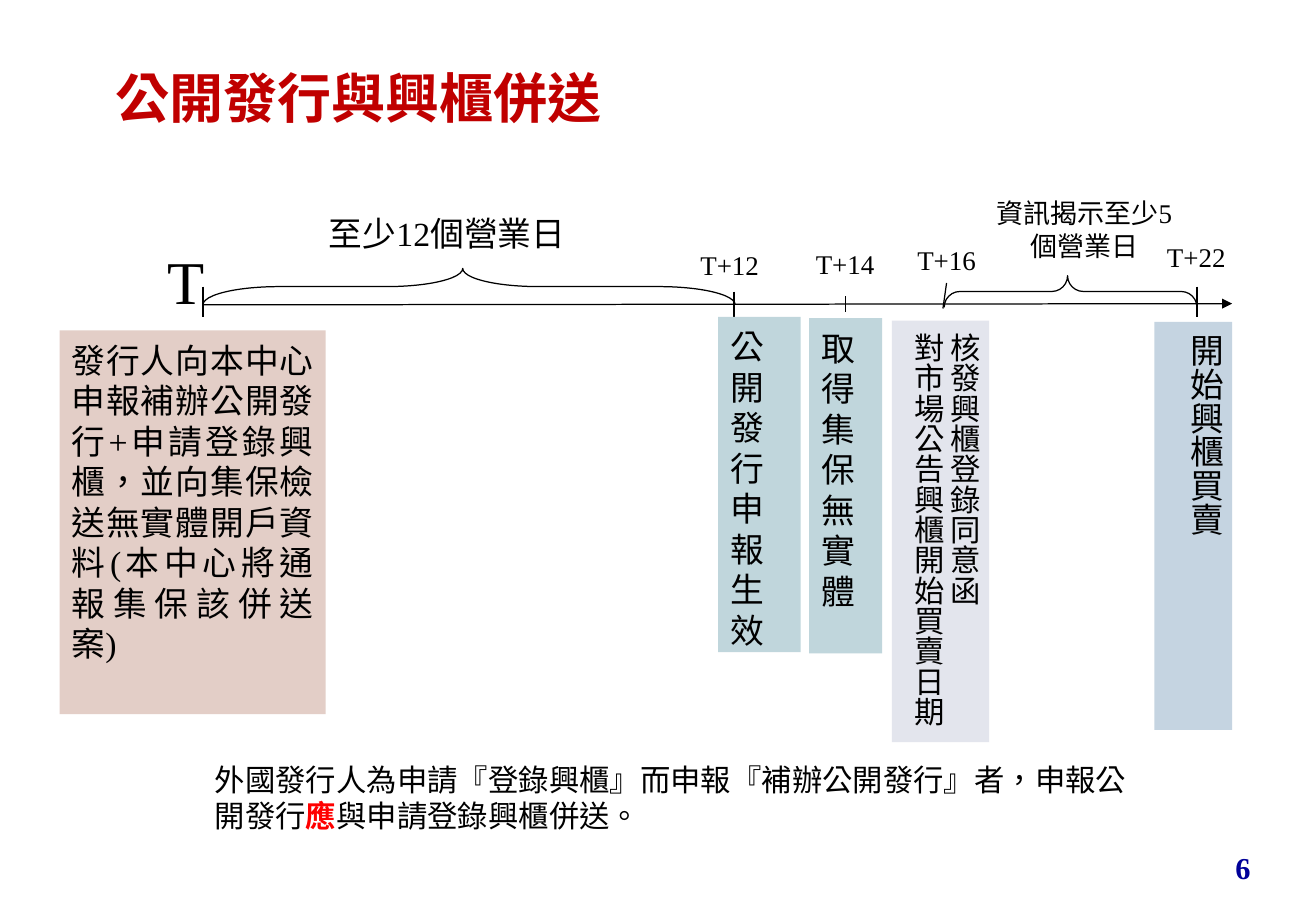
import pptx
import pptx.util
import pptx.dml.color
import pptx.enum.shapes
import pptx.enum.text
import pptx.oxml
import pptx.oxml.ns
from dataclasses import dataclass

Inches = pptx.util.Inches
Pt = pptx.util.Pt
ALIGN = pptx.enum.text.PP_ALIGN
SHAPE = pptx.enum.shapes.MSO_SHAPE
qn = pptx.oxml.ns.qn


@dataclass(frozen=True)
class Theme:
    latin: str = "Times New Roman"
    cjk: str = "Noto Sans CJK SC"
    ink: str = "000000"
    heading: str = "C00000"
    alert: str = "FF0000"
    page: str = "000099"
    filing: str = "E3CEC7"
    approval: str = "C0D6DC"
    consent: str = "E3E5ED"
    trading: str = "C5D4E1"
    title_size: int = 32
    origin_size: int = 36
    step_size: int = 20
    note_size: int = 18
    label_size: int = 16
    leading: float = 1.2
    line_width: float = 0.75


def rgb(value):
    return pptx.dml.color.RGBColor.from_string(value)


class TimelineSlide:
    def __init__(self, deck, theme):
        self.theme = theme
        self.slide = deck.slides.add_slide(deck.slide_layouts[5])
        self.shapes = self.slide.shapes

    def set_words(self, shape, paragraphs, size, align=ALIGN.LEFT, color=None,
                  bold=False, latin=None, vertical=False):
        theme = self.theme
        paragraphs = [[p] if isinstance(p, str) else p for p in paragraphs]
        has_cjk = any(ord(c) > 0x2E80 for p in paragraphs for r in p for c in r[0])
        lift = size / 820 if has_cjk and not vertical else 0
        frame = shape.text_frame
        frame_format = {
            "word_wrap": True,
            "auto_size": pptx.enum.text.MSO_AUTO_SIZE.NONE,
            "vertical_anchor": pptx.enum.text.MSO_ANCHOR.TOP,
            "margin_left": Inches(0.1),
            "margin_right": Inches(0.1),
            "margin_top": Inches(0.05 + lift),
            "margin_bottom": Inches(0.05),
        }
        for name, value in frame_format.items():
            setattr(frame, name, value)
        if vertical:
            shape.element.find(".//" + qn("a:bodyPr")).set("vert", "eaVert")
        for index, pieces in enumerate(paragraphs):
            paragraph = frame.add_paragraph() if index else frame.paragraphs[0]
            paragraph_format = {
                "alignment": align,
                "line_spacing": Pt(size * theme.leading),
                "space_before": Pt(0),
            }
            for name, value in paragraph_format.items():
                setattr(paragraph, name, value)
            for piece in pieces:
                words, accent = piece if isinstance(piece, tuple) else (piece, None)
                run = paragraph.add_run()
                run.text = words
                font_format = {
                    "name": latin or theme.latin,
                    "size": Pt(size),
                    "bold": bold or accent is not None,
                }
                for name, value in font_format.items():
                    setattr(run.font, name, value)
                run.font.color.rgb = rgb(accent or color or theme.ink)
                properties = run.font._element
                properties.set("lang", "zh-TW")
                east_asian = pptx.oxml.parse_xml(
                    "<a:ea %s/>" % pptx.oxml.ns.nsdecls("a"))
                east_asian.set("typeface", theme.cjk)
                properties.find(qn("a:latin")).addnext(east_asian)

    def title(self, box, words):
        heading = self.shapes.title
        for name, value in zip(("left", "top", "width", "height"), box):
            setattr(heading, name, Inches(value))
        self.set_words(heading, [words], self.theme.title_size, bold=True,
                       color=self.theme.heading, latin=self.theme.cjk)

    def text(self, box, paragraphs, size, **style):
        label = self.shapes.add_textbox(*map(Inches, box))
        self.set_words(label, paragraphs, size, **style)

    def step(self, box, paragraphs, fill, size, **style):
        panel = self.shapes.add_shape(SHAPE.RECTANGLE, *map(Inches, box))
        panel.shadow.inherit = False
        panel.fill.solid()
        panel.fill.fore_color.rgb = rgb(fill)
        panel.line.fill.background()
        self.set_words(panel, paragraphs, size, **style)

    def stroke(self, item):
        item.line.color.rgb = rgb(self.theme.ink)
        item.line.width = Pt(self.theme.line_width)

    def brace(self, box, curl):
        span = self.shapes.add_shape(SHAPE.LEFT_BRACE, *map(Inches, box))
        span.rotation = 90
        span.adjustments[0] = curl
        span.adjustments[1] = 0.512
        span.shadow.inherit = False
        span.fill.background()
        self.stroke(span)

    def line(self, start, end, arrow=False):
        rule = self.shapes.add_connector(
            pptx.enum.shapes.MSO_CONNECTOR.STRAIGHT, *map(Inches, start + end))
        self.stroke(rule)
        namespace = pptx.oxml.ns.nsdecls("a")
        if arrow:
            rule.element.find(".//" + qn("a:ln")).append(pptx.oxml.parse_xml(
                '<a:tailEnd %s type="triangle"/>' % namespace))
        rule.element.spPr.append(
            pptx.oxml.parse_xml("<a:effectLst %s/>" % namespace))


def main():
    deck = pptx.Presentation()
    deck.slide_width, deck.slide_height = Inches(10.83), Inches(7.5)
    theme = Theme()
    page = TimelineSlide(deck, theme)
    center, justify = ALIGN.CENTER, ALIGN.JUSTIFY

    page.title((0.85, 0.44, 9.29, 0.87), "公開發行與興櫃併送")
    page.text((8.95, 6.94, 1.44, 0.4), ["6"], theme.note_size,
              align=ALIGN.RIGHT, color=theme.page, bold=True)

    page.line((1.67, 2.51), (10.14, 2.5), arrow=True)
    ticks = [
        ((1.67, 2.36), (1.67, 2.61)),
        ((6.04, 2.4), (6.04, 2.61)),
        ((6.96, 2.44), (6.96, 2.57)),
        ((7.79, 2.33), (7.76, 2.54)),
        ((9.85, 2.36), (9.85, 2.61)),
    ]
    for start, end in ticks:
        page.line(start, end)

    page.brace((3.71, 0.17, 0.3, 4.38), 2.08)
    page.brace((8.68, 1.36, 0.26, 2.08), 0.5)
    page.text((2.21, 1.68, 2.94, 0.51), ["至少12個營業日"],
              theme.step_size, align=center)
    page.text((8.03, 1.55, 1.79, 0.64), ["資訊揭示至少5個營業日"],
              theme.label_size, align=center)

    page.text((1.19, 1.96, 0.68, 0.71), ["T"], theme.origin_size, align=center)
    days = [("T+12", 5.54, 2, 0.93), ("T+14", 6.49, 1.99, 0.93),
            ("T+16", 7.43, 1.96, 0.72), ("T+22", 9.38, 1.93, 0.93)]
    for day, left, top, width in days:
        page.text((left, top, width, 0.37), [day], theme.label_size, align=center)

    page.step((0.49, 2.72, 2.19, 3.16),
              ["發行人向本中心申報補辦公開發行+申請登錄興櫃，並向集保檢送無實體"
               "開戶資料(本中心將通報集保該併送案)"],
              theme.filing, theme.step_size, align=justify)
    page.step((5.91, 2.61, 0.68, 2.76), ["公開發行申報生效"],
              theme.approval, theme.step_size, align=justify)
    page.step((6.66, 2.62, 0.6, 2.76), ["取得集保無實體"],
              theme.approval, theme.step_size, align=justify)
    page.step((7.34, 2.64, 0.8, 3.47),
              ["核發興櫃登錄同意函", "對市場公告興櫃開始買賣日期"],
              theme.consent, theme.note_size, align=justify, vertical=True)
    page.step((9.5, 2.65, 0.64, 3.36), ["開始興櫃買賣"],
              theme.trading, theme.step_size, vertical=True)

    page.text((1.67, 6.19, 7.93, 0.71),
              [["外國發行人為申請『登錄興櫃』而申報『補辦公開發行』者，申報公開發行",
                ("應", theme.alert), "與申請登錄興櫃併送。"]], theme.note_size)

    deck.save("out.pptx")


if __name__ == "__main__":
    main()
